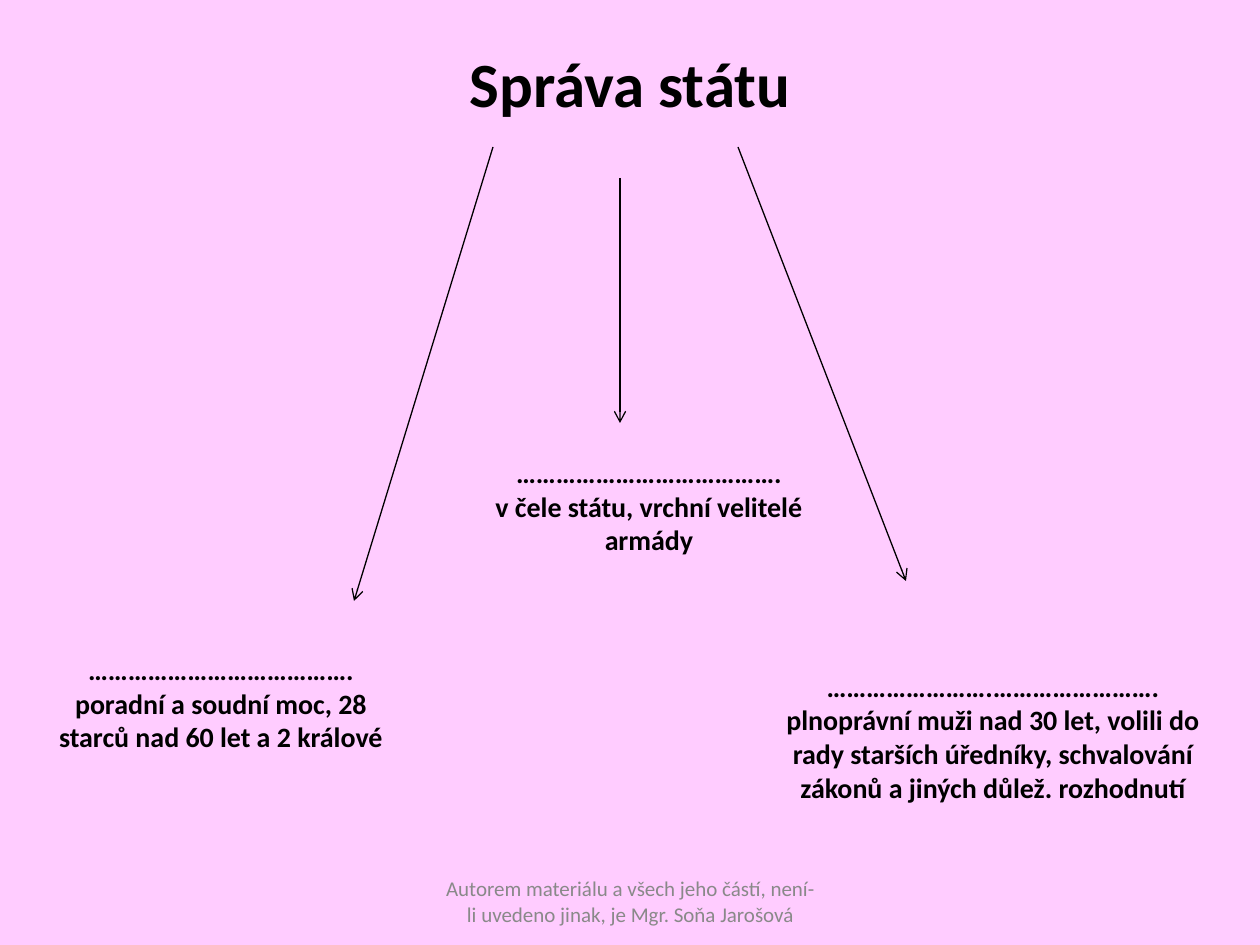
"""Builds the slide on state administration with three arrows to its bodies."""
from pptx import Presentation
from pptx.dml.color import RGBColor
from pptx.enum.text import MSO_ANCHOR as Anchor, PP_ALIGN as Align
from pptx.enum.shapes import MSO_CONNECTOR as Connector
from pptx.oxml.ns import qn
from pptx.util import Pt
from lxml.etree import SubElement

SCALE = 914400 / 126
COLORS = {"background": "FFCCFF", "text": "000000", "footer": "898989"}


def px(length):
    return round(length * SCALE)


def add_text(lines, box, size=16, color="text", bold=True, anchor=Anchor.MIDDLE, bottom=6):
    frame = slide.shapes.add_textbox(*map(px, box)).text_frame
    frame.word_wrap = True
    frame.vertical_anchor = anchor
    frame.margin_bottom = px(bottom)
    frame.text = "\n".join(lines)
    for paragraph in frame.paragraphs:
        paragraph.alignment = Align.CENTER
        font = paragraph.runs[0].font
        font.name = "Calibri"
        font.size = Pt(size)
        font.bold = bold
        font.color.rgb = RGBColor.from_string(COLORS[color])


deck = Presentation()
deck.slide_width, deck.slide_height = px(1260), px(945)
slide = deck.slides.add_slide(deck.slide_layouts[6])
background = slide.background.fill
background.solid()
background.fore_color.rgb = RGBColor.from_string(COLORS["background"])

add_text(["Správa státu"], (63, 38, 1134, 110), size=36, anchor=Anchor.TOP)
add_text(
    ["Autorem materiálu a všech jeho částí, není-li uvedeno jinak, je Mgr. Soňa Jarošová"],
    (431, 876, 399, 50), size=12, color="footer", bold=False,
)

bodies = [
    ("………………………………….", "v čele státu, vrchní velitelé armády", (462, 444, 374, 158)),
    ("………………………………….", "poradní a soudní moc, 28 starců nad 60 let a 2 králové",
     (34, 641, 374, 158)),
    ("…………………….…………………….",
     "plnoprávní muži nad 30 let, volili do rady starších úředníky, "
     "schvalování zákonů a jiných důlež. rozhodnutí",
     (767, 640, 452, 227)),
]
for blank, role, box in bodies:
    add_text([blank, role], box, bottom=40)

for ends in [(620, 178, 620, 423), (738, 147, 906, 581), (493, 147, 354, 601)]:
    arrow = slide.shapes.add_connector(Connector.STRAIGHT, *map(px, ends))
    arrow.line.width = Pt(0.75)
    arrow.line.color.rgb = RGBColor.from_string(COLORS["text"])
    SubElement(arrow.line._get_or_add_ln(), qn("a:tailEnd"), type="arrow")
    SubElement(arrow._element.spPr, qn("a:effectLst"))

deck.save("out.pptx")
